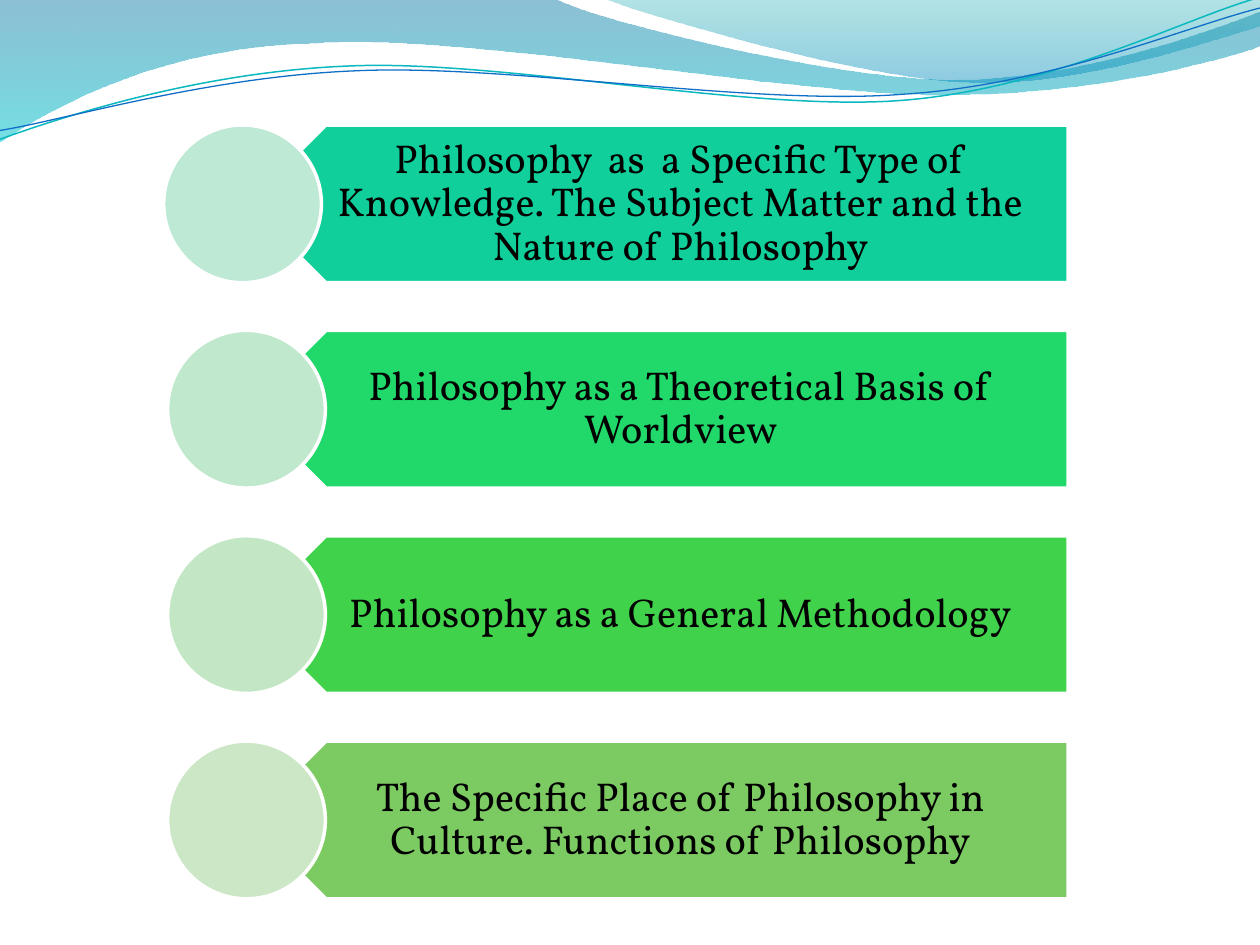
"""Build a slide with four philosophy topics under a wave banner."""
from pptx import Presentation
from pptx.dml.color import RGBColor
from pptx.enum.shapes import MSO_SHAPE as SHAPE
from pptx.enum.text import MSO_ANCHOR, PP_ALIGN
from pptx.oxml.ns import qn
from pptx.util import Cm, Pt
from lxml.etree import SubElement

COLORS = {
    "text": "000000", "border": "FFFFFF",
    "wave_top": "0074A1", "wave_bottom": "00C6CF",
    "crest_top": "00A1A9", "crest_bottom": "008BBF",
    "teal_line": "0AB8BF", "blue_line": "0F6FC6",
    "bar1": "10CF9B", "bar2": "21D86A", "bar3": "41D24C", "bar4": "7CCA62",
    "dot1": "BDE9D5", "dot2": "C0E8CC", "dot3": "C3E7C5", "dot4": "CCE7C6",
}
INCH = 2.54
TOPICS = [
    "Philosophy  as  a Specific Type of Knowledge. The Subject Matter and the Nature of Philosophy",
    "Philosophy as a Theoretical Basis of Worldview",
    "Philosophy as a General Methodology",
    "The Specific Place of Philosophy in Culture. Functions of Philosophy",
]
WAVES = [
    ([(0, 0), (4.4, -0.01), (4.76, 0.17, 6.64, 0.63, 7.58, 0.63),
      (8.53, 0.63, 9.58, 0.26, 10, 0.09), (10.01, 0.36),
      (9.83, 0.44, 8.7, 0.76, 7.46, 0.75), (6.22, 0.75, 3.82, 0.28, 2.57, 0.34),
      (1.29, 0.36, 0.46, 0.83, -0.01, 1.13), (0, 0)],
     [("wave_top", 45), ("wave_bottom", 55)]),
    ([(4.79, -0.01), (5.09, 0.11, 6.82, 0.62, 7.69, 0.65),
      (8.56, 0.69, 9.61, 0.32, 10, 0.21), (10, 0), (4.79, -0.01)],
     [("crest_top", 30), ("crest_bottom", 45)]),
]
LINES = [
    ([(-0.02, 0.87), (0.47, 0.72, 1.58, 0.41, 2.77, 0.42),
      (3.96, 0.42, 5.91, 0.93, 7.12, 0.9), (8.32, 0.87, 9.4, 0.36, 10, 0.22)],
     "teal_line", 0.85),
    ([(-0.02, 0.8), (0.46, 0.75, 1.64, 0.45, 2.83, 0.46),
      (4.03, 0.46, 5.96, 0.89, 7.16, 0.85), (8.35, 0.83, 9.42, 0.42, 10.02, 0.3)],
     "blue_line", 0.75),
]


def rgb(name):
    return RGBColor.from_string(COLORS[name])


def add_curve(shapes, segments, close):
    points = [(Cm(x * INCH), Cm(y * INCH))
              for seg in segments for x, y in zip(seg[::2], seg[1::2])]
    builder = shapes.build_freeform(*points[0])
    builder.add_line_segments(points[1:], close=close)
    sp = builder.convert_to_shape()
    sp.shadow.inherit = False
    steps = iter(list(sp._element.spPr.iter(qn("a:lnTo"))))
    for seg in segments[1:]:
        step = next(steps)
        if len(seg) == 6:
            outline = step.getparent()
            curve = outline.makeelement(qn("a:cubicBezTo"))
            outline.replace(step, curve)
            curve.append(step[0])
            for extra in (next(steps), next(steps)):
                curve.append(extra[0])
                outline.remove(extra)
    return sp


prs = Presentation()
prs.slide_width, prs.slide_height = Cm(25.4), Cm(19.05)
s = prs.slides.add_slide(prs.slide_layouts[6])

for segments, stops in WAVES:
    sp = add_curve(s.shapes, segments, True)
    sp.line.fill.background()
    sp.fill.gradient()
    sp.fill.gradient_angle = 270
    for stop, (name, _) in zip(sp.fill.gradient_stops, stops):
        stop.color.rgb = rgb(name)
    colors = sp._element.spPr.iter(qn("a:srgbClr"))
    for color, (_, opacity) in zip(colors, stops):
        SubElement(color, qn("a:alpha"), val=str(opacity * 1000))

lines = s.shapes.add_group_shape()
for segments, name, width in LINES:
    sp = add_curve(lines.shapes, segments, False)
    sp.rotation = 357.3
    sp.fill.background()
    sp.line.color.rgb = rgb(name)
    sp.line.width = Pt(width)

topics = s.shapes.add_group_shape()
left, width, size = Cm(4.98), Cm(16.55), Cm(3.18)
for i, topic in enumerate(TOPICS):
    top = Cm(2.52 + 4.14 * i)
    dot_left = Cm(3.38 if i else 3.3)
    bar = topics.shapes.add_shape(SHAPE.PENTAGON, left, top, width, size)
    bar.rotation = 180
    box = topics.shapes.add_textbox(left, top, width, size)
    dot = topics.shapes.add_shape(SHAPE.OVAL, dot_left, top, size, size)
    for sp, name in ((bar, f"bar{i + 1}"), (dot, f"dot{i + 1}")):
        sp.shadow.inherit = False
        sp.fill.solid()
        sp.fill.fore_color.rgb = rgb(name)
        sp.line.color.rgb = rgb("border")
        sp.line.width = Pt(2)
    tf = box.text_frame
    tf.word_wrap = True
    tf.vertical_anchor = MSO_ANCHOR.MIDDLE
    tf.margin_left, tf.margin_right = Cm(1.4), Cm(0.46)
    tf.margin_top = tf.margin_bottom = Cm(0.25)
    tf.text = topic
    p = tf.paragraphs[0]
    p.alignment = PP_ALIGN.CENTER
    p.line_spacing = 0.9
    r = p.runs[0]
    r.font.name = "Vollkorn"
    r.font.size = Pt(23)
    r.font.color.rgb = rgb("text")

prs.save("out.pptx")
